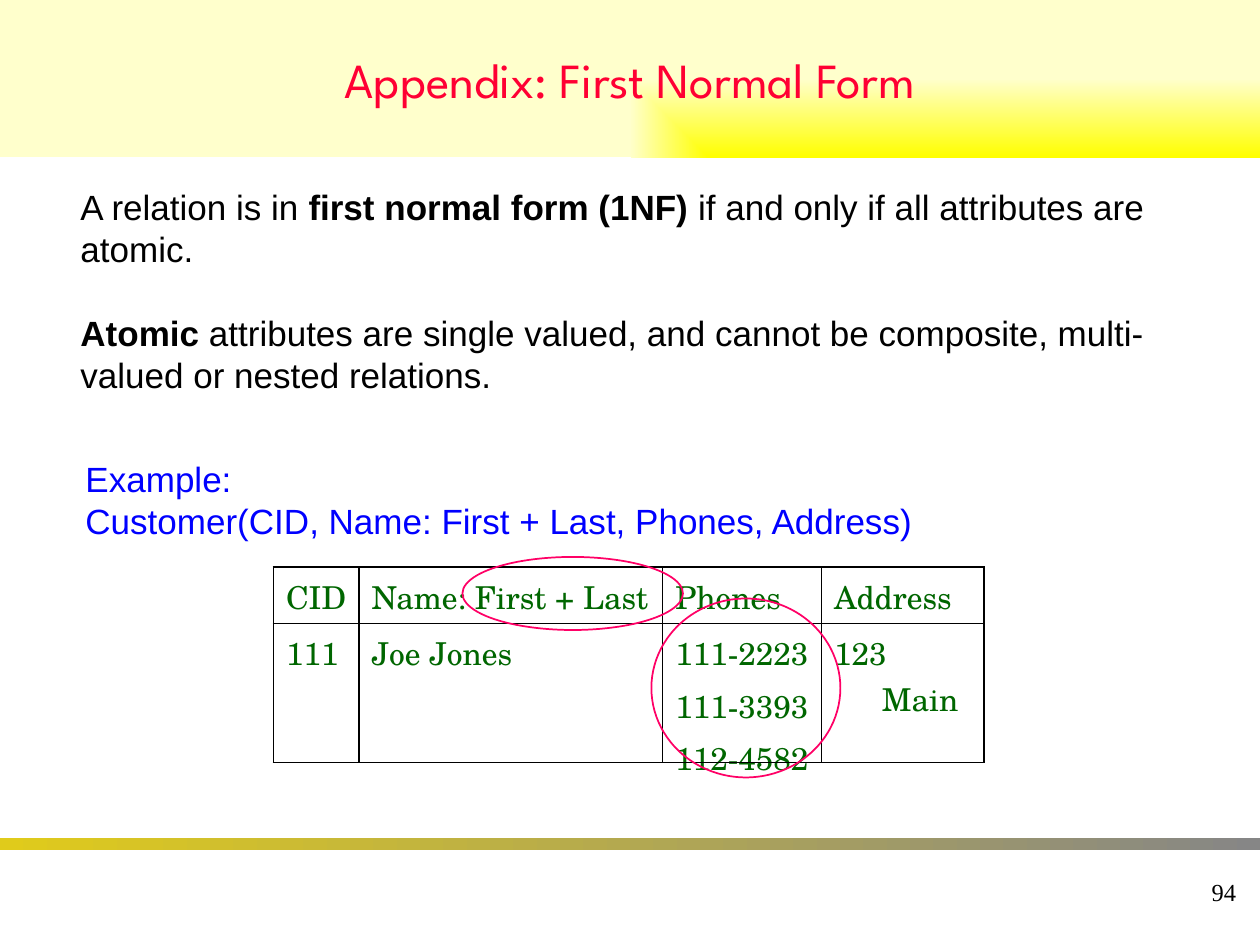
from dataclasses import dataclass

from lxml import etree
from pptx import Presentation
from pptx.dml.color import RGBColor
from pptx.enum import shapes, text
from pptx.oxml import ns
from pptx.util import Inches, Pt


@dataclass(frozen=True)
class Theme:
    """Colours, fonts and type sizes of the slide."""
    red: str = "FF0033"
    pink: str = "FF0066"
    blue: str = "0000FF"
    green: str = "006600"
    black: str = "000000"
    yellow: str = "FFFF00"
    cream: str = "FFFFCC"
    gold: str = "E0CB1B"
    grey: str = "868686"
    title_font: str = "League Spartan"
    body_font: str = "Arial"
    table_font: str = "TeX Gyre Schola"
    number_font: str = "Times New Roman"
    title_size: int = 28
    body_size: int = 20
    table_size: int = 18
    number_size: int = 14


THEME = Theme()


def add_child(parent, tag, **attributes):
    """Append an XML element with attributes to a parent."""
    return etree.SubElement(parent, ns.qn(tag), attributes)


def add_run(paragraph, words, font, size, color, bold=False):
    """Add one formatted run to a paragraph."""
    run = paragraph.add_run()
    run.text = words
    run.font.name = font
    run.font.size = Pt(size)
    run.font.bold = bold
    run.font.color.rgb = RGBColor.from_string(color)


def add_gradient_bar(slide, box, start, end, to_corner=False):
    """Add a borderless bar shaded left to right or out of its bottom right corner."""
    bar = slide.shapes.add_shape(shapes.MSO_SHAPE.RECTANGLE, *map(Inches, box))
    bar.shadow.inherit = False
    bar.line.fill.background()
    bar.fill.gradient()
    bar.fill.gradient_angle = 0
    for stop, color in zip(bar.fill.gradient_stops, (start, end)):
        stop.color.rgb = RGBColor.from_string(color)
    if to_corner:
        gradient = bar.element.spPr.find(ns.qn("a:gradFill"))
        gradient.remove(gradient.find(ns.qn("a:lin")))
        corner = add_child(gradient, "a:path", path="rect")
        add_child(corner, "a:fillToRect", l="100000", t="100000")
    return bar


def add_title(slide, box, words):
    """Add the shaded title band."""
    band = add_gradient_bar(slide, box, THEME.yellow, THEME.cream, to_corner=True)
    band.text_frame.vertical_anchor = text.MSO_ANCHOR.MIDDLE
    paragraph = band.text_frame.paragraphs[0]
    paragraph.alignment = text.PP_ALIGN.CENTER
    add_run(paragraph, words, THEME.title_font, THEME.title_size, THEME.red)


def add_body(slide, box, paragraphs, color, gap=0):
    """Add body paragraphs made of (words, bold) runs, parted by a gap in points."""
    frame = slide.shapes.add_textbox(*map(Inches, box)).text_frame
    frame.word_wrap = True
    for index, runs in enumerate(paragraphs):
        paragraph = frame.add_paragraph() if index else frame.paragraphs[0]
        paragraph.space_before = Pt(gap if index else 0)
        for words, bold in runs:
            add_run(paragraph, words, THEME.body_font, THEME.body_size, color, bold)


def fill_cell(cell, lines):
    """Write the lines of a cell and draw its borders."""
    cell.fill.background()
    for index, line in enumerate(lines):
        frame = cell.text_frame
        paragraph = frame.add_paragraph() if index else frame.paragraphs[0]
        add_run(paragraph, line, THEME.table_font, THEME.table_size, THEME.green)
        properties = paragraph._p.get_or_add_pPr()
        properties.set("marL", str(Inches(0.38)))
        properties.set("indent", str(Inches(-0.38)))
        spacing = add_child(properties, "a:spcBef")
        add_child(spacing, "a:spcPct", val="20000")
    properties = cell._tc.get_or_add_tcPr()
    for index, side in enumerate(("a:lnL", "a:lnR", "a:lnT", "a:lnB")):
        border = etree.Element(ns.qn(side), w=str(Pt(1)))
        add_child(add_child(border, "a:solidFill"), "a:srgbClr", val=THEME.black)
        properties.insert(index, border)


def add_customer_table(slide, box, widths, heights, rows):
    """Add the example relation as a plain bordered table."""
    table = slide.shapes.add_table(len(rows), len(widths), *map(Inches, box)).table
    table.first_row = table.horz_banding = False
    for column, width in zip(table.columns, widths):
        column.width = Inches(width)
    for row, height, values in zip(table.rows, heights, rows):
        row.height = Inches(height)
        for cell, lines in zip(row.cells, values):
            fill_cell(cell, lines)


def add_ring(slide, box):
    """Circle an attribute that is not atomic."""
    ring = slide.shapes.add_shape(shapes.MSO_SHAPE.OVAL, *map(Inches, box))
    ring.shadow.inherit = False
    ring.fill.background()
    ring.line.color.rgb = RGBColor.from_string(THEME.pink)
    ring.line.width = Pt(1)


def add_slide_number(slide, box, number):
    """Add the page number at the lower right."""
    frame = slide.shapes.add_textbox(*map(Inches, box)).text_frame
    frame.word_wrap = False
    frame.vertical_anchor = text.MSO_ANCHOR.MIDDLE
    paragraph = frame.paragraphs[0]
    paragraph.alignment = text.PP_ALIGN.RIGHT
    add_run(paragraph, number, THEME.number_font, THEME.number_size, THEME.black)


def main():
    """Build and save the slide."""
    presentation = Presentation()
    presentation.slide_width, presentation.slide_height = Inches(10), Inches(7.5)
    slide = presentation.slides.add_slide(presentation.slide_layouts[6])

    add_gradient_bar(slide, (0, 6.65, 10, 0.1), THEME.gold, THEME.grey)
    add_slide_number(slide, (7.83, 6.83, 2.08, 0.5), "94")
    add_title(slide, (0, 0, 10, 1.25), "Appendix: First Normal Form")
    definitions = [
        [("A relation is in ", False), ("first normal form (1NF)", True),
         (" if and only if all attributes are atomic.", False)],
        [("Atomic", True),
         (" attributes are single valued, and cannot be composite, "
          "multi-valued or nested relations.", False)],
    ]
    add_body(slide, (0.54, 1.42, 8.96, 1.78), definitions, THEME.black, gap=24)
    example = [
        [("Example:", False)],
        [("Customer(CID, Name: First + Last, Phones, Address)", False)],
    ]
    add_body(slide, (0.58, 3.58, 8.67, 0.77), example, THEME.blue)
    rows = [
        [["CID"], ["Name: First + Last"], ["Phones"], ["Address"]],
        [["111"], ["Joe Jones"], ["111-2223", "111-3393", "112-4582"], ["123 Main"]],
    ]
    add_customer_table(slide, (2.17, 4.5, 5.64, 1.5),
                       (0.68, 2.41, 1.26, 1.29), (0.45, 1.05), rows)
    for box in ((3.67, 4.42, 1.75, 0.58), (5.17, 4.75, 1.5, 1.42)):
        add_ring(slide, box)
    presentation.save("out.pptx")


if __name__ == "__main__":
    main()
